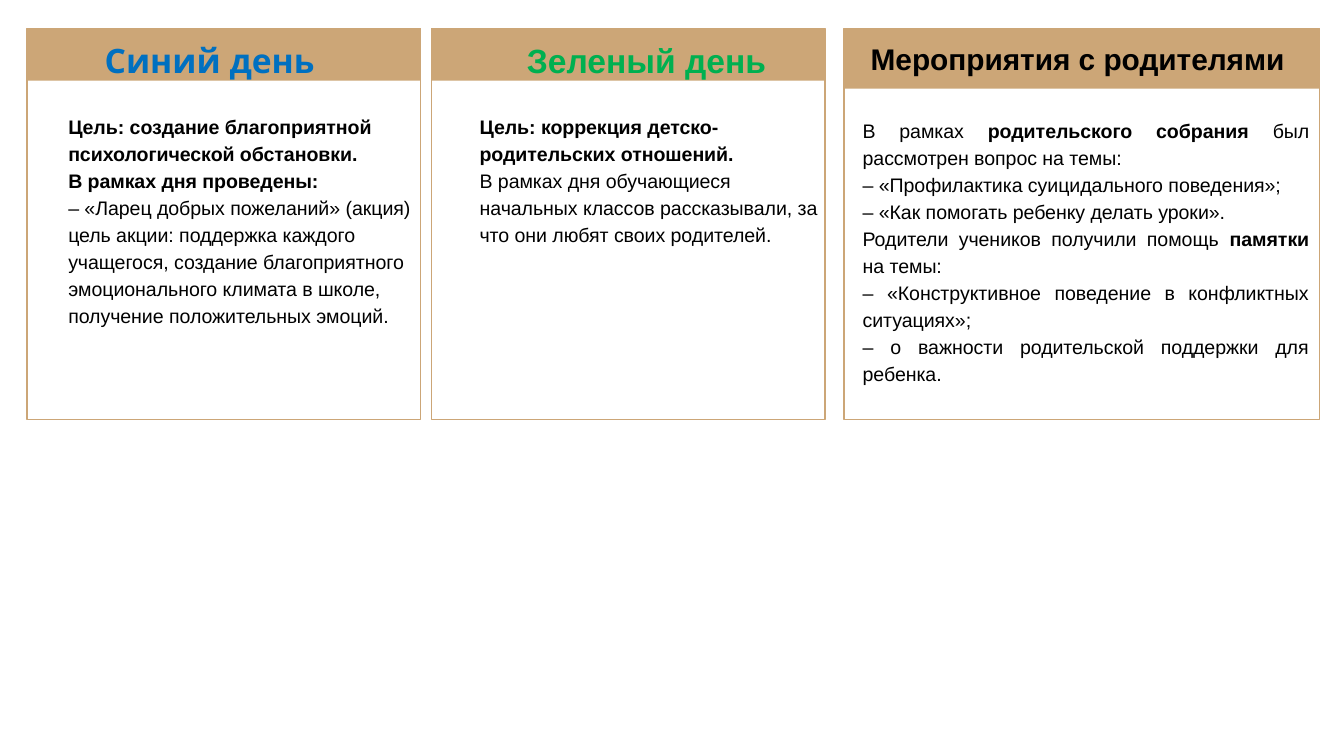
import pptx
import pptx.dml.color
import pptx.enum.shapes
import pptx.enum.text
import pptx.util

ALIGN = pptx.enum.text.PP_ALIGN
ANCHOR = pptx.enum.text.MSO_ANCHOR
RECTANGLE = pptx.enum.shapes.MSO_SHAPE.RECTANGLE

# The slide is a grid of 100 columns; rows are as tall as columns are wide.
UNIT = pptx.util.Inches(0.1)
CARD_TOP, CARD_HEIGHT = 2.1, 29.1
TAN, BLACK = "CCA677", "000000"

# Double asterisks switch bold on and off.
BLUE_DAY = [
    "**Цель: создание благоприятной психологической обстановки.**",
    "**В рамках дня проведены:**",
    "– «Ларец добрых пожеланий» (акция)",
    "цель акции: поддержка каждого учащегося, создание благоприятного "
    "эмоционального климата в школе, получение положительных эмоций.",
]
GREEN_DAY = [
    "**Цель: коррекция детско-родительских отношений.**",
    "В рамках дня обучающиеся начальных классов рассказывали, "
    "за что они любят своих родителей.",
]
PARENT_EVENTS = [
    "В рамках **родительского собрания** был рассмотрен вопрос на темы:",
    "– «Профилактика суицидального поведения»;",
    "– «Как помогать ребенку делать уроки».",
    "Родители учеников получили помощь **памятки** на темы:",
    "– «Конструктивное поведение в конфликтных ситуациях»;",
    "– о важности родительской поддержки для ребенка.",
]


def color(value):
    return pptx.dml.color.RGBColor.from_string(value)


def grid(*lengths):
    return [round(length * UNIT) for length in lengths]


def prepare_frame(frame, anchor=ANCHOR.TOP):
    frame.word_wrap = True
    frame.vertical_anchor = anchor
    frame.margin_left = frame.margin_right = UNIT
    frame.margin_top = frame.margin_bottom = UNIT
    return frame


def write_paragraph(paragraph, text, size, font="Arial", fill=BLACK,
                    align=ALIGN.LEFT, spacing=1.15):
    """Write text, giving bold to the parts between double asterisks."""
    paragraph.alignment = align
    paragraph.line_spacing = spacing
    paragraph.font.size = pptx.util.Pt(size)
    paragraph.font.name = font
    paragraph.font.color.rgb = color(fill)
    for index, part in enumerate(text.split("**")):
        if part:
            run = paragraph.add_run()
            run.text = part
            run.font.bold = index % 2 == 1


def add_card(slide, left, width, band_height):
    """Draw an outlined card with a filled band on top; return the band."""
    card = slide.shapes.add_group_shape()
    outline, band = [
        card.shapes.add_shape(RECTANGLE, *grid(left, CARD_TOP, width, height))
        for height in (CARD_HEIGHT, band_height)
    ]
    outline.shadow.inherit = band.shadow.inherit = False
    outline.fill.background()
    outline.line.color.rgb = color(TAN)
    outline.line.width = pptx.util.Pt(0.75)
    band.fill.solid()
    band.fill.fore_color.rgb = color(TAN)
    band.line.fill.background()
    return band


def add_body(slide, box, lines, align=ALIGN.LEFT):
    frame = prepare_frame(slide.shapes.add_textbox(*grid(*box)).text_frame)
    for index, line in enumerate(lines):
        paragraph = frame.add_paragraph() if index else frame.paragraphs[0]
        write_paragraph(paragraph, line, 10.5, align=align)


def add_day(slide, left, title, font, fill, title_shift, body_shift, body_width,
            lines):
    add_card(slide, left, 29.3, 3.9)
    heading = slide.shapes.add_textbox(
        *grid(left + title_shift, CARD_TOP - 0.6, 27.2, 4.5))
    write_paragraph(prepare_frame(heading.text_frame).paragraphs[0],
                    f"**{title}**", 18, font, fill, ALIGN.CENTER)
    add_body(slide, (left + body_shift, CARD_TOP + 5.2, body_width, 18.1), lines)


def add_parent_events(slide, left):
    band = add_card(slide, left, 35.4, 4.5)
    heading = prepare_frame(band.text_frame, ANCHOR.MIDDLE).paragraphs[0]
    write_paragraph(heading, "**Мероприятия с родителями **", 16,
                    align=ALIGN.CENTER, spacing=1.0)
    add_body(slide, (left + 0.4, CARD_TOP + 5.5, 35.2, 26.8), PARENT_EVENTS,
             ALIGN.JUSTIFY)


def main():
    deck = pptx.Presentation()
    deck.slide_width, deck.slide_height = grid(100, 56.25)
    slide = deck.slides.add_slide(deck.slide_layouts[6])
    add_day(slide, 2, "Синий день", "Open Sans", "0070C0", 0, 2.1, 28.4, BLUE_DAY)
    add_day(slide, 32.1, "Зеленый день", "Arial", "00B050", 2.4, 2.6, 27.2,
            GREEN_DAY)
    add_parent_events(slide, 62.8)
    deck.save("out.pptx")


if __name__ == "__main__":
    main()
